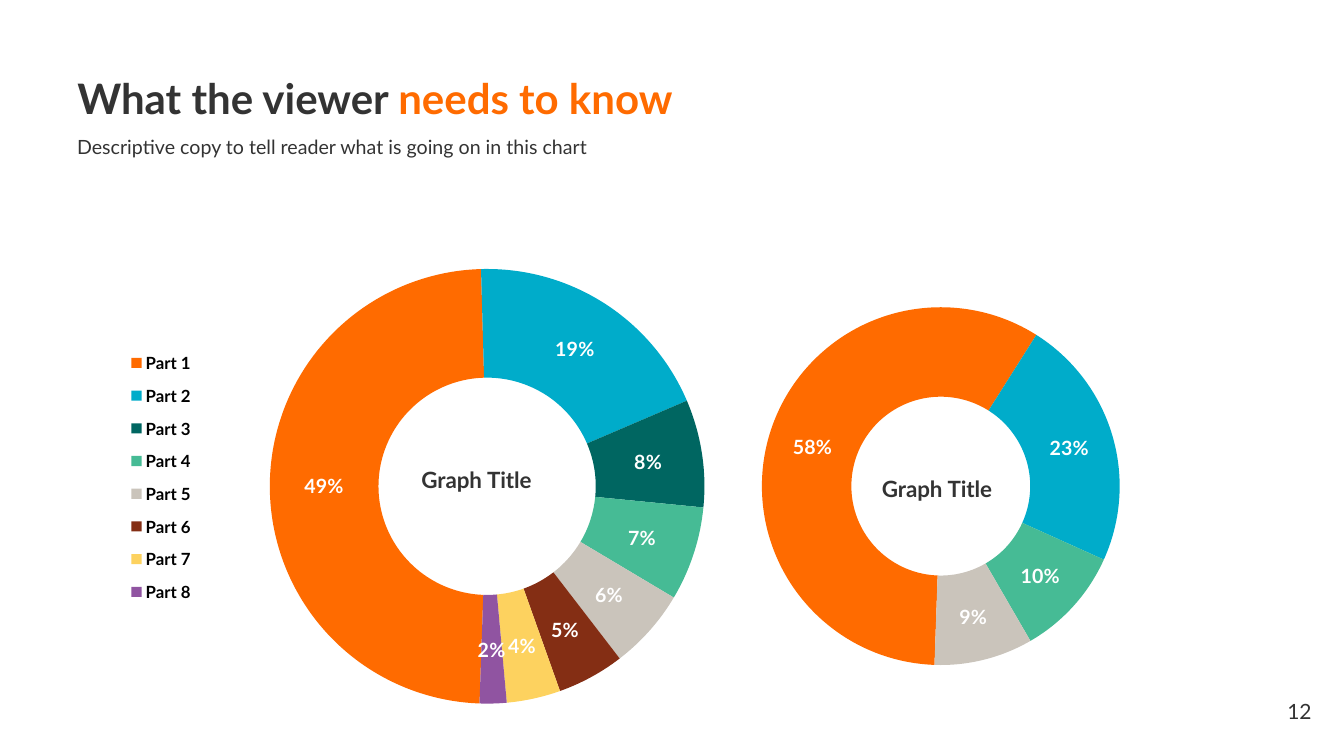
"""Build a slide that compares two doughnut charts."""
from dataclasses import dataclass

from lxml import etree
from pptx import Presentation
from pptx.chart.data import CategoryChartData
from pptx.dml.color import RGBColor
from pptx.enum.chart import XL_CHART_TYPE, XL_LEGEND_POSITION
from pptx.enum.text import MSO_ANCHOR, PP_ALIGN
from pptx.oxml.ns import qn
from pptx.util import Pt

DOUGHNUT = XL_CHART_TYPE.DOUGHNUT
LEGEND_LEFT = XL_LEGEND_POSITION.LEFT
ALIGN_LEFT, ALIGN_RIGHT = PP_ALIGN.LEFT, PP_ALIGN.RIGHT
MIDDLE, TOP = MSO_ANCHOR.MIDDLE, MSO_ANCHOR.TOP
TITLE_ONLY = 5


@dataclass(frozen=True)
class Theme:
    """Colours, font and type sizes of the slide."""
    font: str = "Lato"
    chart_font: str = "Calibri"
    ink: str = "333333"
    black: str = "000000"
    white: str = "FFFFFF"
    orange: str = "FF6B00"
    blue: str = "00ACCA"
    teal: str = "006661"
    green: str = "46BB95"
    stone: str = "CAC4BB"
    brown: str = "842E14"
    yellow: str = "FDD25F"
    purple: str = "9054A1"
    headline: int = 30
    graph_title: int = 16
    page: int = 15
    body: int = 14
    legend: int = 12
    chart: int = 10


THEME = Theme()


def style_font(font, size, color, bold=False, name=THEME.font):
    """Set the face, size, weight and colour of a font."""
    font.name, font.size, font.bold = name, Pt(size), bold
    font.color.rgb = RGBColor.from_string(color)


def write(paragraph, text, size=THEME.body, color=THEME.ink, bold=False,
          align=None, spacing=None):
    """Append formatted text to a paragraph."""
    run = paragraph.add_run()
    run.text = text
    style_font(run.font, size, color, bold)
    if align is not None:
        paragraph.alignment = align
    if spacing is not None:
        paragraph.line_spacing = spacing


def prepare_frame(frame, anchor=TOP):
    """Make a text frame wrap and return its first paragraph."""
    frame.word_wrap = True
    frame.vertical_anchor = anchor
    return frame.paragraphs[0]


def add_text(slide, box, text, **formatting):
    """Add a text box holding one paragraph."""
    frame = slide.shapes.add_textbox(*map(Pt, box)).text_frame
    write(prepare_frame(frame), text, **formatting)


def set_headline(slide, box, plain, accent):
    """Place the title and write it in two colours."""
    title = slide.shapes.title
    title.left, title.top, title.width, title.height = map(Pt, box)
    paragraph = prepare_frame(title.text_frame, MIDDLE)
    write(paragraph, plain, size=THEME.headline, bold=True,
          align=ALIGN_LEFT, spacing=0.9)
    write(paragraph, accent, size=THEME.headline, color=THEME.orange, bold=True)


def place_part(part, index, inner=False, **fractions):
    """Give a chart part a manual layout in fractions of the chart."""
    for old in part.findall(qn("c:layout")):
        part.remove(old)
    layout = etree.Element(qn("c:layout"))
    manual = etree.SubElement(layout, qn("c:manualLayout"))
    settings = {"layoutTarget": "inner"} if inner else {}
    settings |= {"xMode": "edge", "yMode": "edge"} | fractions
    for tag, value in settings.items():
        etree.SubElement(manual, qn(f"c:{tag}")).set("val", str(value))
    part.insert(index, layout)


def add_doughnut(slide, box, categories, values, colors, plot_area, title_at):
    """Add a doughnut with percent labels and a title in its hole."""
    data = CategoryChartData()
    data.categories = categories
    data.add_series("Series 1", values)
    chart = slide.shapes.add_chart(DOUGHNUT, *map(Pt, box), data).chart
    style_font(chart.font, THEME.chart, THEME.black, name=THEME.chart_font)
    chart.has_legend = False
    chart.has_title = True
    write(chart.chart_title.text_frame.paragraphs[0], "Graph Title",
          size=THEME.graph_title, bold=True)
    chart_parts = chart.element.chart
    place_part(chart_parts.find(qn("c:title")), 1, **title_at)
    place_part(chart_parts.plotArea, 0, inner=True, **plot_area)

    plot = chart.plots[0]
    plot.vary_by_categories = True
    ring = chart_parts.plotArea.find(qn("c:doughnutChart"))
    ring.find(qn("c:firstSliceAng")).set("val", "182")
    ring.find(qn("c:holeSize")).set("val", "62")
    for index, color in enumerate(colors):
        fill = plot.series[0].points[index].format.fill
        fill.solid()
        fill.fore_color.rgb = RGBColor.from_string(color)
    plot.has_data_labels = True
    labels = plot.data_labels
    labels.show_value, labels.show_percentage = False, True
    labels.number_format, labels.number_format_is_linked = "0%", False
    style_font(labels.font, THEME.body, THEME.white, bold=True)
    return chart


def add_legend(chart, **fractions):
    """Show the legend at the left of a chart."""
    chart.has_legend = True
    legend = chart.legend
    legend.position = LEGEND_LEFT
    legend.include_in_layout = False
    style_font(legend.font, THEME.legend, THEME.black, bold=True)
    place_part(chart.element.chart.find(qn("c:legend")), 1, **fractions)


def main():
    """Build and save the slide."""
    deck = Presentation()
    deck.slide_width, deck.slide_height = Pt(960), Pt(540)
    slide = deck.slides.add_slide(deck.slide_layouts[TITLE_ONLY])

    set_headline(slide, (48, 40, 707, 64), "What the viewer ", "needs to know")
    add_text(slide, (48, 95, 526, 45),
             "Descriptive copy to tell reader what is going on in this chart",
             spacing=0.9)

    detailed = add_doughnut(
        slide, (37.5, 111, 554.5, 426),
        [f"Part {number}" for number in range(1, 9)],
        (49, 19, 8, 7, 6, 5, 4, 2),
        (THEME.orange, THEME.blue, THEME.teal, THEME.green,
         THEME.stone, THEME.brown, THEME.yellow, THEME.purple),
        plot_area=dict(x=0.28, y=0.19, w=0.56, h=0.73),
        title_at=dict(x=0.47, y=0.51))
    add_legend(detailed, x=0.09, y=0.31, w=0.1, h=0.46)

    add_doughnut(
        slide, (495.5, 104.5, 321, 426), ["1", "2", "3", "4"], (59, 23, 10, 9),
        (THEME.orange, THEME.blue, THEME.green, THEME.stone),
        plot_area=dict(x=0.15, y=0.27, w=0.8, h=0.6),
        title_at=dict(x=0.41, y=0.54))

    add_text(slide, (880, 495.5, 64, 25), "12", size=THEME.page,
             align=ALIGN_RIGHT)
    deck.save("out.pptx")


if __name__ == "__main__":
    main()
